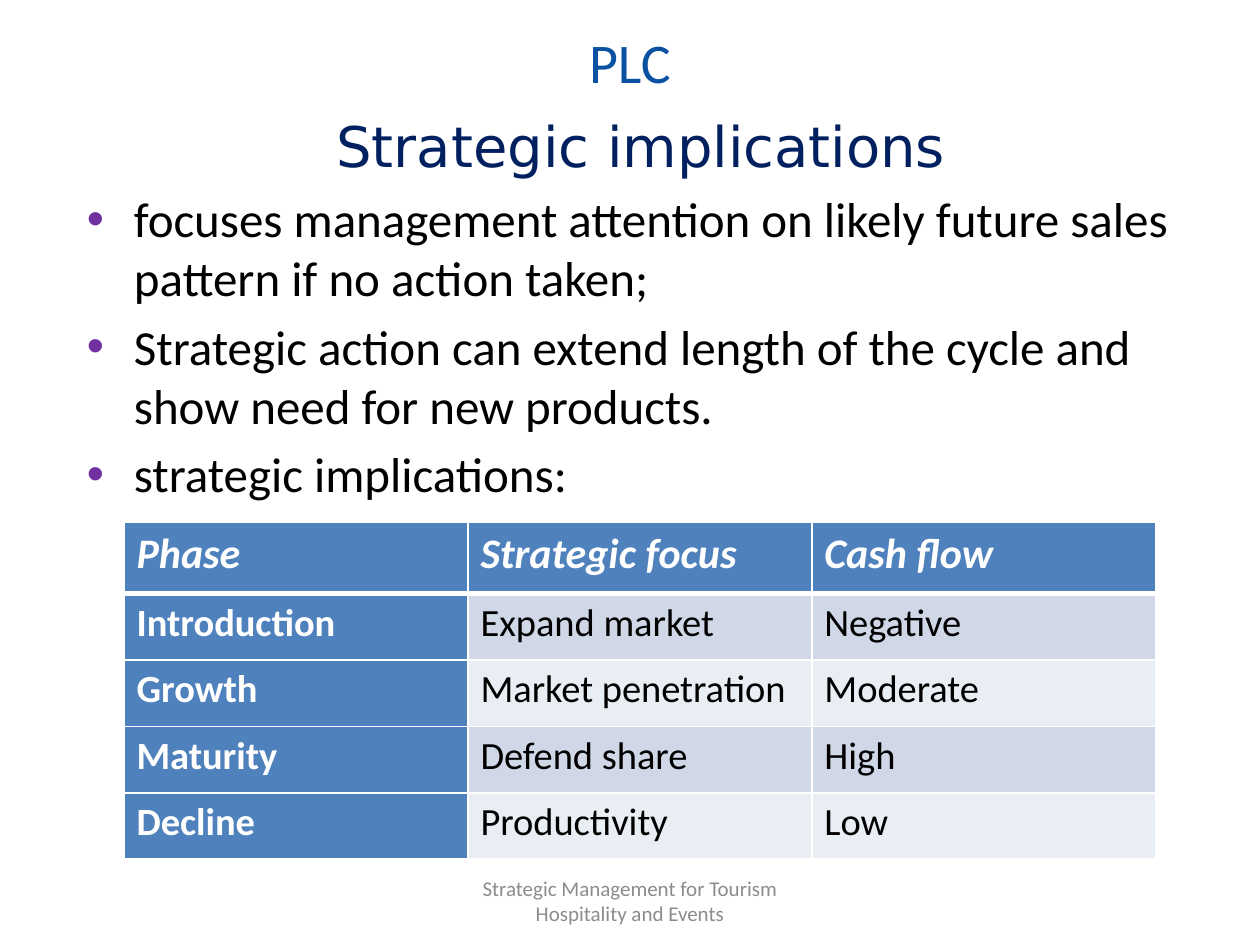
from lxml.etree import SubElement
from pptx import Presentation
from pptx.dml.color import RGBColor
from pptx.enum.text import MSO_ANCHOR, PP_ALIGN
from pptx.oxml.ns import qn
from pptx.util import Cm, Pt

HUES = {
    "title": "0B51A1", "navy": "002060", "bullet": "7030A0", "ink": "000000",
    "foot": "8C8C8C", "white": "FFFFFF", "head": "4F81BD",
    "dark": "D0D8E8", "light": "E9EDF4",
}
POINTS = [
    "focuses management attention on likely future sales pattern if no action taken;",
    "Strategic action can extend length of the cycle and show need for new products.",
    "strategic implications:",
]
PHASES = [
    ("Phase", "Strategic focus", "Cash flow"),
    ("Introduction", "Expand market", "Negative"),
    ("Growth", "Market penetration", "Moderate"),
    ("Maturity", "Defend share", "High"),
    ("Decline", "Productivity", "Low"),
]


def style(part, text, size, hue, face="Calibri", align=PP_ALIGN.LEFT, **more):
    part.alignment = align
    run = part.add_run()
    run.text = text
    form = {"name": face, "size": Pt(size), **more}
    for key, value in form.items():
        setattr(run.font, key, value)
    run.font.color.rgb = RGBColor.from_string(HUES[hue])


def add_frame(slide, box, anchor):
    frame = slide.shapes.add_textbox(*map(Cm, box)).text_frame
    form = {"word_wrap": True, "vertical_anchor": anchor}
    for key, value in form.items():
        setattr(frame, key, value)
    return frame


def add_line(slide, box, text, size, hue):
    frame = add_frame(slide, box, MSO_ANCHOR.MIDDLE)
    style(frame.paragraphs[0], text, size, hue, align=PP_ALIGN.CENTER)


def add_bullet(part):
    props = part._p.get_or_add_pPr()
    props.set("marL", str(Cm(0.95)))
    props.set("indent", str(Cm(-0.95)))
    tint = SubElement(props, qn("a:buClr"))
    SubElement(tint, qn("a:srgbClr"), val=HUES["bullet"])
    SubElement(props, qn("a:buFont"), typeface="Arial")
    SubElement(props, qn("a:buChar"), char="•")


def add_body(slide, box):
    frame = add_frame(slide, box, MSO_ANCHOR.TOP)
    head = frame.paragraphs[0]
    head.space_before = Pt(6.4)
    style(head, "Strategic implications", 32, "navy", "DejaVu Sans", PP_ALIGN.CENTER)
    for text in POINTS:
        part = frame.add_paragraph()
        part.space_before = Pt(5.6)
        style(part, text, 28, "ink")
        add_bullet(part)


def add_edges(cell, widths):
    props = cell._tc.get_or_add_tcPr()
    for spot, (side, width) in enumerate(widths.items()):
        edge = SubElement(props, qn(f"a:ln{side}"), w=str(Pt(width)))
        fill = SubElement(edge, qn("a:solidFill"))
        SubElement(fill, qn("a:srgbClr"), val=HUES["white"])
        props.insert(spot, edge)


def add_grid(slide, box):
    left, top, width, height = box
    shape = slide.shapes.add_table(len(PHASES), len(PHASES[0]), *map(Cm, box))
    table = shape.table
    first = 1.45
    for row in table.rows:
        row.height = Cm((height - first) / (len(PHASES) - 1))
    table.rows[0].height = Cm(first)
    for r, row in enumerate(PHASES):
        for c, text in enumerate(row):
            cell = table.cell(r, c)
            top_row, label = r == 0, r == 0 or c == 0
            hue = "head" if label else "dark" if r % 2 else "light"
            cell.fill.solid()
            cell.fill.fore_color.rgb = RGBColor.from_string(HUES[hue])
            style(cell.text_frame.paragraphs[0], text, 24 if top_row else 22,
                  "white" if label else "ink", bold=label, italic=top_row)
            add_edges(cell, {"L": 1, "R": 1, "T": 3 if r == 1 else 1,
                             "B": 3 if top_row else 1})


def main():
    deck = Presentation()
    deck.slide_width, deck.slide_height = Cm(25.4), Cm(19.05)
    slide = deck.slides.add_slide(deck.slide_layouts[6])
    add_line(slide, (1.27, 0.33, 22.86, 1.8), "PLC", 32, "title")
    add_body(slide, (1.5, 2.13, 22.86, 14.88))
    add_line(slide, (8.68, 17.65, 8.04, 1.01),
             "Strategic Management for Tourism Hospitality and Events", 12, "foot")
    add_grid(slide, (2.5, 10.52, 20.8, 6.8))
    deck.save("out.pptx")


if __name__ == "__main__":
    main()
